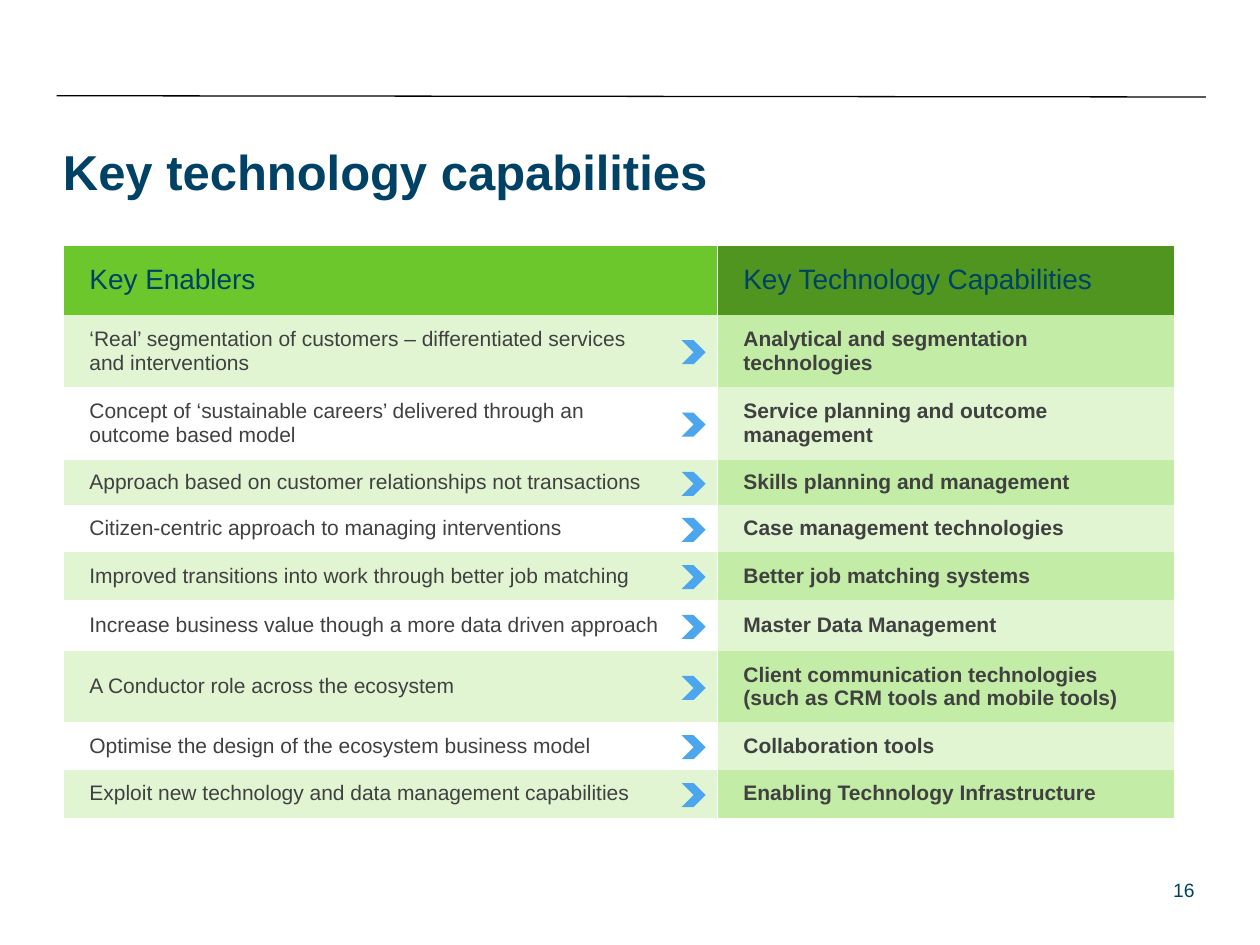
from itertools import accumulate

from pptx import Presentation
from pptx.dml.color import RGBColor
from pptx.enum.shapes import MSO_CONNECTOR, MSO_SHAPE
from pptx.enum.text import MSO_ANCHOR, PP_ALIGN
from pptx.oxml.ns import qn
from pptx.util import Inches, Pt
from lxml import etree

STRAIGHT = MSO_CONNECTOR.STRAIGHT
CHEVRON = MSO_SHAPE.CHEVRON
MIDDLE = MSO_ANCHOR.MIDDLE
LEFT, RIGHT = PP_ALIGN.LEFT, PP_ALIGN.RIGHT

NAVY, GREY, BLACK, BLUE = "004266", "404040", "000000", "4BA6EE"
WHITE, PALE, SOFT = "FFFFFF", "E1F5D3", "C3ECA7"
GREEN, DARK_GREEN = "6BC72B", "509520"
NO_TABLE_STYLE = "{2D5ABB26-0587-4C30-8999-92F81FD0307C}"

TABLE_TOP = 1.95
ROW_HEIGHTS = [0.55, 0.57, 0.58, 0.36, 0.37, 0.38, 0.41, 0.56, 0.38, 0.38]
CHEVRON_LEFT, CHEVRON_SIZE, CHEVRON_DROP = 5.41, 0.19, 0.01

ENABLERS = [
    "Key Enablers",
    "‘Real’ segmentation of customers – differentiated services \vand interventions",
    "Concept of ‘sustainable careers’ delivered through an \voutcome based model",
    "Approach based on customer relationships not transactions",
    "Citizen-centric approach to managing interventions",
    "Improved transitions into work through better job matching",
    "Increase business value though a more data driven approach",
    "A Conductor role across the ecosystem",
    "Optimise the design of the ecosystem business model",
    "Exploit new technology and data management capabilities",
]
CAPABILITIES = [
    "Key Technology Capabilities",
    "Analytical and segmentation technologies",
    "Service planning and outcome management",
    "Skills planning and management",
    "Case management technologies",
    "Better job matching systems",
    "Master Data Management",
    "Client communication technologies \v(such as CRM tools and mobile tools)",
    "Collaboration tools",
    "Enabling Technology Infrastructure",
]


def colour(value):
    return RGBColor.from_string(value)


def set_margins(target, left, top, right, bottom):
    margins = {"left": left, "top": top, "right": right, "bottom": bottom}
    for side, size in margins.items():
        setattr(target, f"margin_{side}", Inches(size))


class PageBuilder:
    """Holds the text style and the page being filled."""

    def __init__(self, page, font="Arial"):
        self.page = page
        self.font = font

    def fill_text(self, frame, text, size, ink, bold=False, align=LEFT):
        frame.word_wrap = True
        para = frame.paragraphs[0]
        para.text = text
        para.alignment = align
        for span in para.runs:
            for name, value in {"name": self.font, "size": Pt(size), "bold": bold}.items():
                setattr(span.font, name, value)
            span.font.color.rgb = colour(ink)

    def text(self, area, text, size, margins, **style):
        box = self.page.shapes.add_textbox(*map(Inches, area))
        set_margins(box.text_frame, *margins)
        self.fill_text(box.text_frame, text, size, NAVY, **style)

    def rule(self, start, end):
        line = self.page.shapes.add_connector(STRAIGHT, *map(Inches, start + end))
        line.line.color.rgb = colour(BLACK)
        line.line.width = Pt(0.75)
        etree.SubElement(line._element.spPr, qn("a:effectLst"))

    def column_table(self, left, width, texts, header_fill, band_fills, bold=False):
        """Add a one-column table whose body rows alternate between two fills."""
        area = (left, TABLE_TOP, width, sum(ROW_HEIGHTS))
        table = self.page.shapes.add_table(len(texts), 1, *map(Inches, area)).table
        table.horz_banding = False
        table._tbl.tblPr.find(qn("a:tableStyleId")).text = NO_TABLE_STYLE
        for index, (text, height) in enumerate(zip(texts, ROW_HEIGHTS)):
            table.rows[index].height = Inches(height)
            cell = table.cell(index, 0)
            cell.vertical_anchor = MIDDLE
            cell.fill.solid()
            if index == 0:
                fill, inset = header_fill, 0.05
                self.fill_text(cell.text_frame, text, 16, NAVY)
            else:
                fill, inset = band_fills[(index - 1) % 2], 0
                self.fill_text(cell.text_frame, text, 12, GREY, bold)
            cell.fill.fore_color.rgb = colour(fill)
            set_margins(cell, 0.2, inset, 0.1, inset)

    def chevron(self, middle):
        area = (CHEVRON_LEFT, middle - CHEVRON_SIZE / 2, CHEVRON_SIZE, CHEVRON_SIZE)
        shape = self.page.shapes.add_shape(CHEVRON, *map(Inches, area))
        shape.shadow.inherit = False
        shape.fill.solid()
        shape.fill.fore_color.rgb = colour(BLUE)
        shape.line.fill.background()


def main():
    deck = Presentation()
    deck.slide_width, deck.slide_height = Inches(10), Inches(7.5)
    builder = PageBuilder(deck.slides.add_slide(deck.slide_layouts[6]))

    builder.rule((0.45, 0.76), (9.57, 0.77))
    builder.text((0.5, 1.12, 9, 0.47), "Key technology capabilities", 28,
                 (0, 0, 0, 0), bold=True)
    builder.text((9.08, 6.92, 0.5, 0.25), "16", 11, (0.1, 0.05, 0.1, 0.05), align=RIGHT)

    builder.column_table(0.51, 5.18, ENABLERS, GREEN, (PALE, WHITE))
    builder.column_table(5.7, 3.62, CAPABILITIES, DARK_GREEN, (SOFT, PALE), bold=True)

    row_tops = accumulate(ROW_HEIGHTS, initial=TABLE_TOP)
    for top, height in list(zip(row_tops, ROW_HEIGHTS))[1:]:
        builder.chevron(top + height / 2 + CHEVRON_DROP)

    deck.save("out.pptx")


if __name__ == "__main__":
    main()
